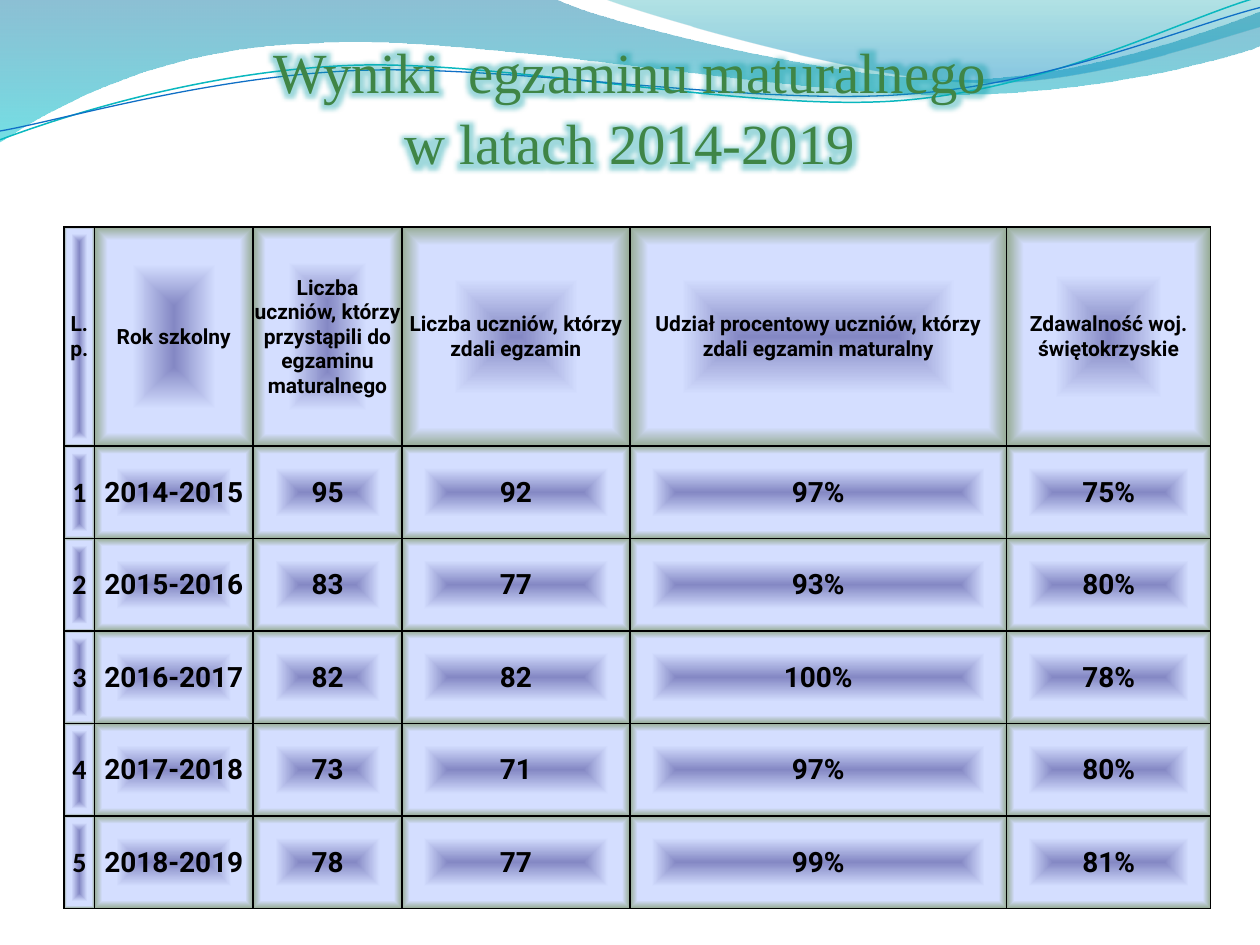
from lxml import etree
from pptx import Presentation
from pptx.dml.color import RGBColor
from pptx.enum.text import MSO_ANCHOR, PP_ALIGN
from pptx.oxml.ns import qn
from pptx.util import Inches, Pt

CENTER = PP_ALIGN.CENTER
MIDDLE, BOTTOM = MSO_ANCHOR.MIDDLE, MSO_ANCHOR.BOTTOM

# Each curve is a start point, then single points (lines) or triples (Beziers).
BAND = [
    (0, 0), [(4.4, -0.01)],
    [(4.76, 0.17), (6.64, 0.63), (7.58, 0.63)],
    [(8.53, 0.63), (9.58, 0.26), (10, 0.09)], [(10.01, 0.36)],
    [(9.83, 0.44), (8.7, 0.76), (7.46, 0.75)],
    [(6.22, 0.75), (3.82, 0.28), (2.57, 0.34)],
    [(1.29, 0.36), (0.46, 0.83), (-0.01, 1.13)],
]
CORNER = [
    (4.79, -0.01),
    [(5.09, 0.11), (6.82, 0.62), (7.69, 0.65)],
    [(8.56, 0.69), (9.61, 0.32), (10, 0.21)], [(10, 0)],
]
TEAL_WAVE = [
    (0, 1.11),
    [(0.48, 0.93), (1.58, 0.57), (2.77, 0.52)],
    [(3.95, 0.47), (5.93, 0.89), (7.13, 0.8)],
    [(8.33, 0.71), (9.38, 0.15), (9.98, -0.02)],
]
BLUE_WAVE = [
    (0, 1.04),
    [(0.47, 0.96), (1.64, 0.61), (2.83, 0.56)],
    [(4.03, 0.51), (5.97, 0.84), (7.17, 0.75)],
    [(8.36, 0.67), (9.41, 0.21), (10, 0.06)],
]
CELL_STOPS = [(0, "8488C4", 100), (53, "D4DEFF", 100),
              (83, "D4DEFF", 100), (100, "96AB94", 100)]
COLS = [0.24, 1.26, 1.18, 1.81, 2.99, 1.62]
HEADS = [
    "L.p.", "Rok szkolny",
    "Liczba uczniów, którzy przystąpili do egzaminu maturalnego",
    "Liczba uczniów, którzy zdali egzamin",
    "Udział procentowy uczniów, którzy zdali egzamin maturalny",
    "Zdawalność woj. świętokrzyskie",
]
RESULTS = [
    ("1", "2014-2015", "95", "92", "97%", "75%"),
    ("2", "2015-2016", "83", "77", "93%", "80%"),
    ("3", "2016-2017", "82", "82", "100%", "78%"),
    ("4", "2017-2018", "73", "71", "97%", "80%"),
    ("5", "2018-2019", "78", "77", "99%", "81%"),
]


def color(code):
    return RGBColor.from_string(code)


def node(parent, tag, **attrs):
    item = etree.SubElement(parent, qn(tag))
    for key, value in attrs.items():
        item.set(key, str(value))
    return item


def tint(parent, code, alpha):
    item = node(parent, "a:srgbClr", val=code)
    if alpha < 100:
        node(item, "a:alpha", val=alpha * 1000)


def blend(parent, stops):
    """Add a gradient fill made of (position, colour, opacity) stops."""
    grad = node(parent, "a:gradFill", rotWithShape=1)
    marks = node(grad, "a:gsLst")
    for pos, code, alpha in stops:
        tint(node(marks, "a:gs", pos=pos * 1000), code, alpha)
    return grad


def draw(slide, curve, closed):
    """Build a freeform, then merge each triple of lines into one Bezier."""
    start, *parts = curve
    points = [(Inches(x), Inches(y)) for part in parts for x, y in part]
    pen = slide.shapes.build_freeform(Inches(start[0]), Inches(start[1]))
    pen.add_line_segments(points, close=closed)
    shape = pen.convert_to_shape()
    shape.shadow.inherit = False
    lines = iter(list(shape._element.iter(qn("a:lnTo"))))
    for part in parts:
        group = [next(lines) for _ in part]
        if len(group) == 3:
            bend = etree.Element(qn("a:cubicBezTo"))
            group[0].addprevious(bend)
            for line in group:
                bend.append(line[0])
                line.getparent().remove(line)
    return shape


def add_waves(slide):
    fills = [
        (BAND, [(0, "0074A1", 45), (100, "00C6CF", 55)]),
        (CORNER, [(0, "00A1A9", 30), (80, "008BBF", 45)]),
    ]
    for curve, stops in fills:
        shape = draw(slide, curve, True)
        shape.line.fill.background()
        props = shape.fill._xPr
        grad = blend(props, stops)
        node(grad, "a:lin", ang=5400000, scaled=1)
        props.find(qn("a:custGeom")).addnext(grad)
    for curve, code, width in [(TEAL_WAVE, "0AB8BF", 0.85),
                               (BLUE_WAVE, "0F6FC6", 0.75)]:
        shape = draw(slide, curve, False)
        shape.fill.background()
        shape.line.color.rgb = color(code)
        shape.line.width = Pt(width)


def add_title(slide, left, top, width, height):
    box = slide.shapes.add_textbox(
        Inches(left), Inches(top), Inches(width), Inches(height))
    frame = box.text_frame
    frame.word_wrap = True
    frame.vertical_anchor = BOTTOM
    frame.margin_left = frame.margin_right = frame.margin_bottom = 0
    para = frame.paragraphs[0]
    para.text = "Wyniki  egzaminu maturalnego\vw latach 2014-2019"
    para.alignment = CENTER
    para.line_spacing = Pt(41)
    for run in para.runs:
        run.font.size = Pt(32.4)
        run.font.name = "Times New Roman"
        run.font.color.rgb = color("3F8546")
        props = run.font._element
        effects = node(props, "a:effectLst")
        props.find(qn("a:solidFill")).addnext(effects)
        tint(node(effects, "a:glow", rad=Inches(0.2)), "0F9FA8", 40)


def style_cell(cell, text, size, face):
    cell.text = text
    cell.vertical_anchor = MIDDLE
    cell.margin_left = cell.margin_right = cell.margin_top = Inches(0.01)
    cell.margin_bottom = 0
    para = cell.text_frame.paragraphs[0]
    para.alignment = CENTER
    font = para.runs[0].font
    font.size, font.name, font.bold = Pt(size), face, True
    font.color.rgb = color("000000")
    props = cell._tc.get_or_add_tcPr()
    for side in ("a:lnL", "a:lnR", "a:lnT", "a:lnB"):
        edge = node(props, side, w=Pt(1))
        tint(node(edge, "a:solidFill"), "000000", 100)
    shade = node(blend(props, CELL_STOPS), "a:path", path="rect")
    node(shade, "a:fillToRect", l=50000, t=50000, r=50000, b=50000)


def add_results(slide, left, top, width, height):
    rows = [HEADS, *RESULTS]
    table = slide.shapes.add_table(
        len(rows), len(COLS), Inches(left), Inches(top),
        Inches(width), Inches(height)).table
    table.first_row = table.horz_banding = False
    for col, size in zip(table.columns, COLS):
        col.width = Inches(size)
    head = 1.74
    share = (height - head) / len(RESULTS)
    for r, texts in enumerate(rows):
        table.rows[r].height = Inches(share if r else head)
        for c, text in enumerate(texts):
            face = "Calibri" if r and c == 0 else "Roboto"
            style_cell(table.cell(r, c), text, 16 if r else 12, face)


def main():
    deck = Presentation()
    deck.slide_width, deck.slide_height = Inches(10), Inches(7.5)
    slide = deck.slides.add_slide(deck.slide_layouts[6])
    add_waves(slide)
    add_title(slide, 0.5, 0.23, 9, 1.17)
    add_results(slide, 0.51, 1.8, 9.1, 5.41)
    deck.save("out.pptx")


if __name__ == "__main__":
    main()
